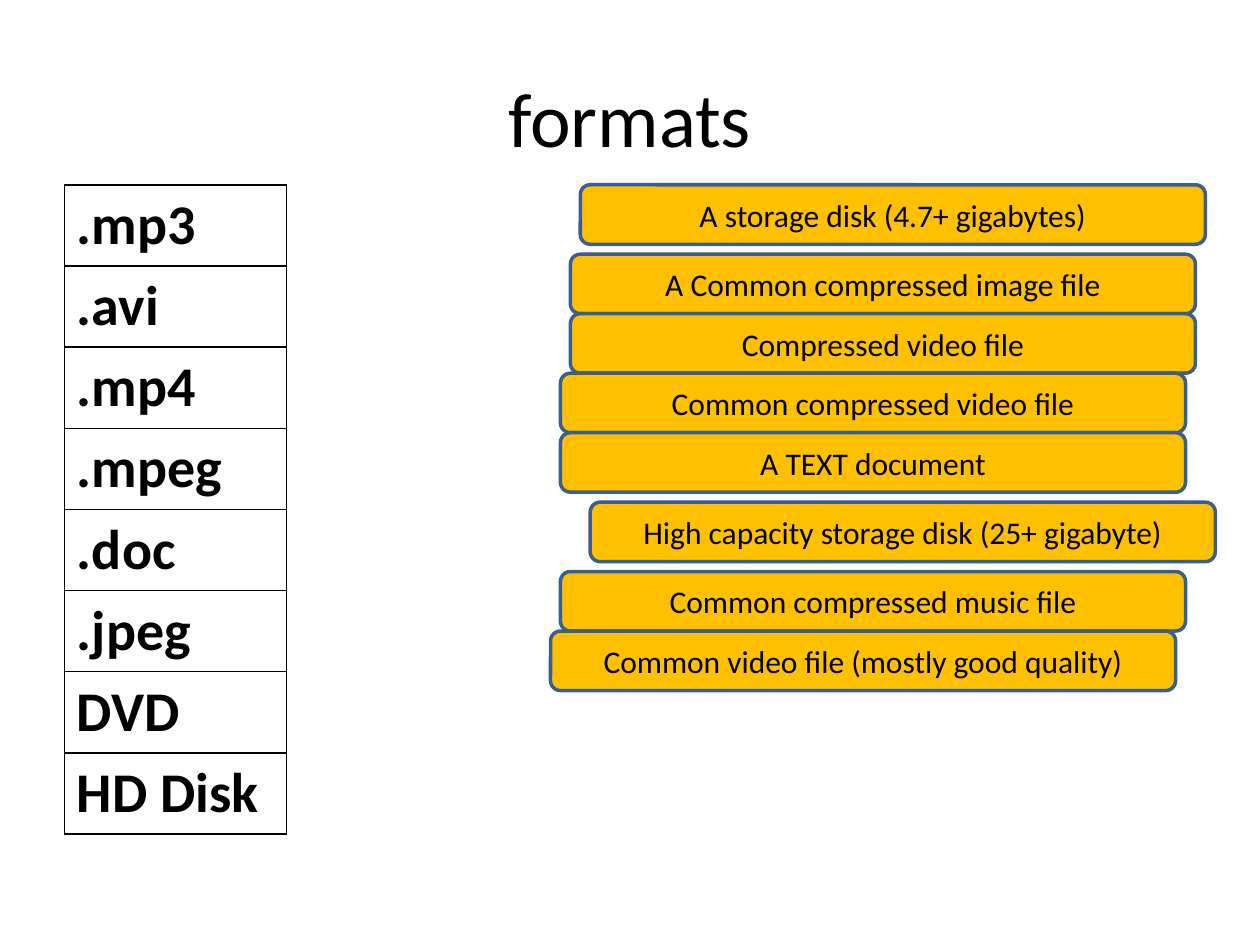
from lxml import etree
from pptx import Presentation
from pptx.dml.color import RGBColor
from pptx.enum import shapes, text
from pptx.oxml import ns
from pptx.util import Pt

BLACK = RGBColor(0x00, 0x00, 0x00)
WHITE = RGBColor(0xFF, 0xFF, 0xFF)
GOLD = RGBColor(0xFF, 0xC0, 0x00)
BLUE = RGBColor(0x3A, 0x5F, 0x8C)
FACE = "Calibri"
STEP = 5.67  # grid unit for card indents and gaps

NAMES = [".mp3", ".avi", ".mp4", ".mpeg", ".doc", ".jpeg", "DVD", "HD Disk"]

# wording, indent in steps, gap above in steps
CARDS = [
    ("A storage disk (4.7+ gigabytes)", 3, 0),
    ("A Common compressed image file", 2, 1),
    ("Compressed video file", 2, 0),
    ("Common compressed video file", 1, 0),
    ("A TEXT document", 1, 0),
    ("High capacity storage disk (25+ gigabyte)", 4, 1),
    ("Common compressed music file", 1, 1),
    ("Common video file (mostly good quality)", 0, 0),
]


def style(frame, size, bold=False):
    for para in frame.paragraphs:
        for run in para.runs:
            font = run.font
            font.name, font.size, font.bold = FACE, Pt(size), bold
            font.color.rgb = BLACK


def add_title(slide, left, top, width, height):
    title = slide.shapes.title
    title.left, title.top = Pt(left), Pt(top)
    title.width, title.height = Pt(width), Pt(height)
    frame = title.text_frame
    frame.text = "formats"
    frame.vertical_anchor = text.MSO_ANCHOR.MIDDLE
    frame.paragraphs[0].alignment = text.PP_ALIGN.CENTER
    style(frame, 44)


def edge(cell):
    """Draw a thin black border on all four sides, ahead of the fill."""
    props = cell._tc.get_or_add_tcPr()
    for spot, side in enumerate(("lnL", "lnR", "lnT", "lnB")):
        line = etree.Element(ns.qn("a:" + side), w=str(Pt(1)))
        fill = etree.SubElement(line, ns.qn("a:solidFill"))
        etree.SubElement(fill, ns.qn("a:srgbClr"), val=str(BLACK))
        props.insert(spot, line)


def add_names(slide, left, top, width, height):
    count = len(NAMES)
    table = slide.shapes.add_table(
        count, 1, Pt(left), Pt(top), Pt(width), Pt(height)).table
    table.first_row = table.horz_banding = False
    for row, name in enumerate(NAMES):
        table.rows[row].height = Pt(height / count)
        cell = table.cell(row, 0)
        cell.text_frame.text = name
        style(cell.text_frame, 32, True)
        cell.fill.solid()
        cell.fill.fore_color.rgb = WHITE
        edge(cell)


def add_cards(slide, left, top, width, height):
    """Stack the cards; width and height are those of one card."""
    for label, indent, gap in CARDS:
        top += gap * STEP
        card = slide.shapes.add_shape(
            shapes.MSO_SHAPE.ROUNDED_RECTANGLE,
            Pt(left + indent * STEP), Pt(top), Pt(width), Pt(height))
        card.shadow.inherit = False
        card.fill.solid()
        card.fill.fore_color.rgb = GOLD
        card.line.color.rgb = BLUE
        card.line.width = Pt(2)
        frame = card.text_frame
        frame.text = label
        frame.vertical_anchor = text.MSO_ANCHOR.MIDDLE
        frame.paragraphs[0].alignment = text.PP_ALIGN.CENTER
        style(frame, 18)
        top += height


def main():
    deck = Presentation()
    deck.slide_width, deck.slide_height = Pt(720), Pt(540)
    slide = deck.slides.add_slide(deck.slide_layouts[5])
    add_title(slide, 36, 21.6, 648, 90)
    add_names(slide, 36.8, 105.6, 126.8, 371.2)
    add_cards(slide, 314.6, 105.6, 357.2, 34)
    deck.save("out.pptx")


if __name__ == "__main__":
    main()
